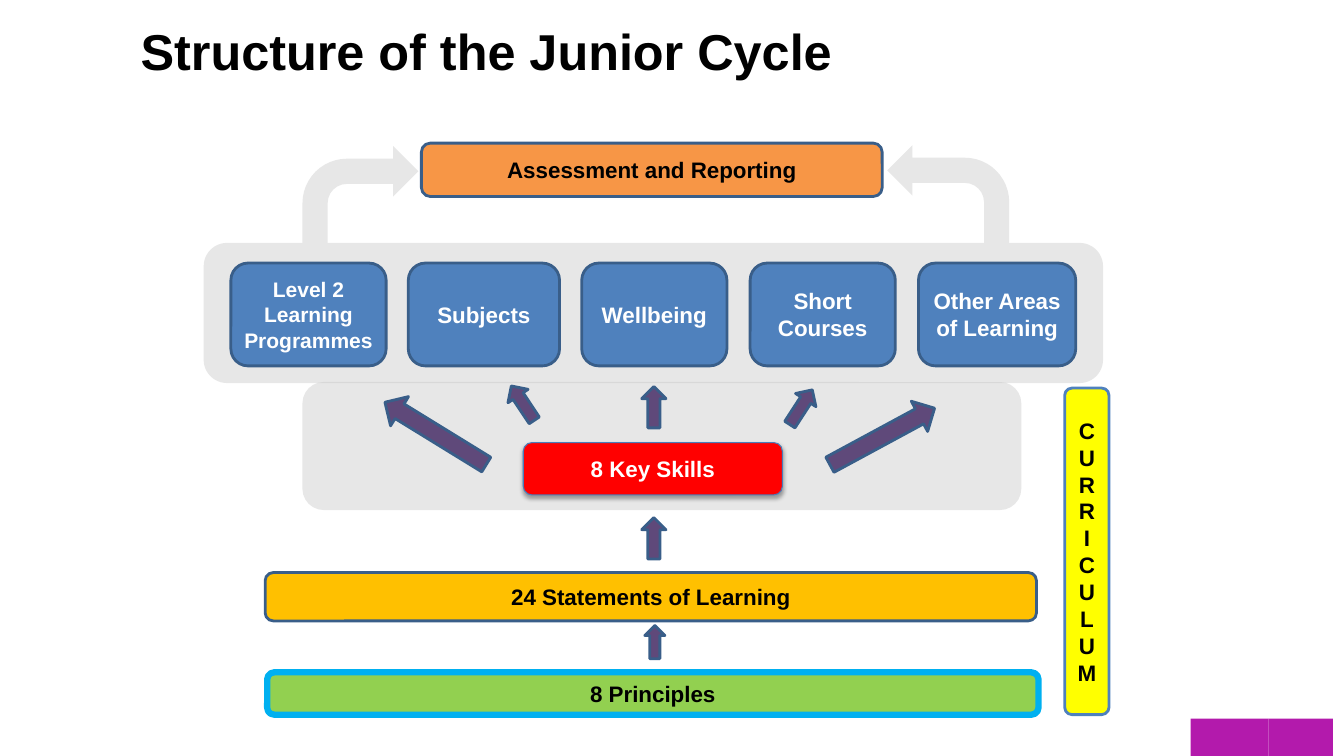
from pptx import Presentation
from pptx.dml.color import RGBColor
from pptx.enum.shapes import MSO_SHAPE
from pptx.enum.text import MSO_ANCHOR, PP_ALIGN
from pptx.oxml.ns import qn
from pptx.util import Emu, Pt
from lxml.etree import SubElement

PX = 9144  # 100 px to the inch
HUES = {
    "black": "000000", "white": "FFFFFF", "silver": "C0C0C0", "pale": "E7E7E7",
    "purple": "B31AAC", "plum": "5F497A", "navy": "395E89", "blue": "4F81BD",
    "steel": "4A7DBA", "sky": "00B0F0", "green": "92D050", "gold": "FFC000",
    "orange": "F79646", "red": "FF0000", "yellow": "FFFF00",
}


def hue(name):
    return RGBColor.from_string(HUES[name])


def px(*sizes):
    return [Emu(size * PX) for size in sizes]


def write(shape, text, size=16, color="black", pad=(10, 5), anchor=MSO_ANCHOR.MIDDLE):
    frame = shape.text_frame
    frame.word_wrap = True
    frame.vertical_anchor = anchor
    frame.margin_left, frame.margin_top = px(*pad)
    frame.margin_right, frame.margin_bottom = px(*pad)
    frame.text = text
    for para in frame.paragraphs:
        para.alignment = PP_ALIGN.CENTER
        font = para.font
        font.name, font.size, font.bold = "Arial", Pt(size), True
        font.color.rgb = hue(color)


def draw(slide, kind, box, fill, line=None, width=2, alpha=None):
    shape = slide.shapes.add_shape(kind, *px(*box))
    shape.shadow.inherit = False
    shape.fill.solid()
    shape.fill.fore_color.rgb = hue(fill)
    if alpha:
        tint = shape.element.spPr.find(qn("a:solidFill"))[0]
        SubElement(tint, qn("a:alpha"), val=str(alpha * 1000))
    if line:
        shape.line.color.rgb = hue(line)
        shape.line.width = Pt(width)
    else:
        shape.line.fill.background()
    return shape


def card(slide, box, text, fill, line="navy", width=2, **style):
    shape = draw(slide, MSO_SHAPE.ROUNDED_RECTANGLE, box, fill, line, width)
    write(shape, text, **style)
    return shape


def panel(slide, box):
    draw(slide, MSO_SHAPE.ROUNDED_RECTANGLE, box, "silver", alpha=38)


def arrow(slide, box, turn=90):
    draw(slide, MSO_SHAPE.LEFT_ARROW, box, "plum", "navy").rotation = turn


def glow(shape):
    # Soft drop shadow
    effects = shape.element.spPr.find(qn("a:effectLst"))
    cast = SubElement(effects, qn("a:outerShdw"), blurRad=str(Pt(3)),
                      dist=str(Pt(2)), dir="5400000", rotWithShape="0")
    tint = SubElement(cast, qn("a:srgbClr"), val=HUES["black"])
    SubElement(tint, qn("a:alpha"), val="35000")


def header(slide, box):
    title = slide.shapes.add_textbox(*px(*box))
    write(title, "Structure of the Junior Cycle", size=36, pad=(10, 10),
          anchor=MSO_ANCHOR.TOP)


def footer(slide, box):
    left, top, wide, high = box
    split = 77
    for x, w in ((0, split), (split, wide - split)):
        draw(slide, MSO_SHAPE.RECTANGLE, (left + x, top, w, high), "purple")


def report(slide, box):
    # Assessment bar with a bent arrow on each side
    left, top, wide, high = box
    card(slide, (left + 118, top, 457, high), "Assessment and Reporting", "orange")
    for x, y, w, flip in ((0, 3, 115, False), (wide - 121, 2, 121, True)):
        bend = draw(slide, MSO_SHAPE.BENT_ARROW, (left + x, top + y, w, 100), "pale")
        bend.adjustments[3] = 0.44
        if flip:
            bend.element.spPr.find(qn("a:xfrm")).set("flipH", "1")


def areas(slide, box):
    # Row of learning areas, equal gaps
    left, top, _, _ = box
    panel(slide, box)
    tight = {"pad": (0, 0)}
    x = left + 27
    for text, wide, style in (
        ("Level 2 Learning Programmes", 154, {"size": 15, **tight}),
        ("Subjects", 150, {}),
        ("Wellbeing", 144, {}),
        ("Short Courses", 144, {}),
        ("Other Areas of Learning", 156, tight),
    ):
        card(slide, (x, top + 20, wide, 102), text, "blue", color="white", **style)
        x += wide + 22 + (wide == 144)


def skills(slide, box):
    # Key skills with five arrows fanning out
    left, top, _, _ = box
    panel(slide, box)
    glow(card(slide, (left + 219, top + 60, 257, 52), "8 Key Skills", "red",
              "steel", 0.75, color="white"))
    short, long = (41, 24), (118, 34)
    for x, y, size, turn in (
        (73, 34, long, 31.6), (198, 9, short, 56.3), (328, 13, short, 90),
        (474, 13, short, 122.9), (516, 37, long, 151.6),
    ):
        arrow(slide, (left + x, top + y, *size), turn)


def base(slide, box):
    # Statements and principles, linked upwards
    left, top, wide, _ = box
    arrow(slide, (left + 365, top, 41, 24))
    card(slide, (left, top + 46, wide, 48), "24 Statements of Learning", "gold")
    arrow(slide, (left + 370, top + 105, 33, 20))
    card(slide, (left + 2, top + 145, wide, 42), "8 Principles", "green", "sky", 4.5)


def side(slide, box):
    card(slide, box, "\n".join("CURRICULUM"), "yellow", "blue")


def main():
    deck = Presentation()
    deck.slide_width, deck.slide_height = px(1333, 750)
    slide = deck.slides.add_slide(deck.slide_layouts[6])
    footer(slide, (1181, 713, 141, 37))
    header(slide, (117, 10, 731, 118))
    skills(slide, (300, 379, 713, 127))
    areas(slide, (202, 241, 892, 139))
    report(slide, (300, 142, 701, 53))
    base(slide, (263, 522, 765, 187))
    side(slide, (1056, 385, 44, 324))
    deck.save("out.pptx")


if __name__ == "__main__":
    main()
